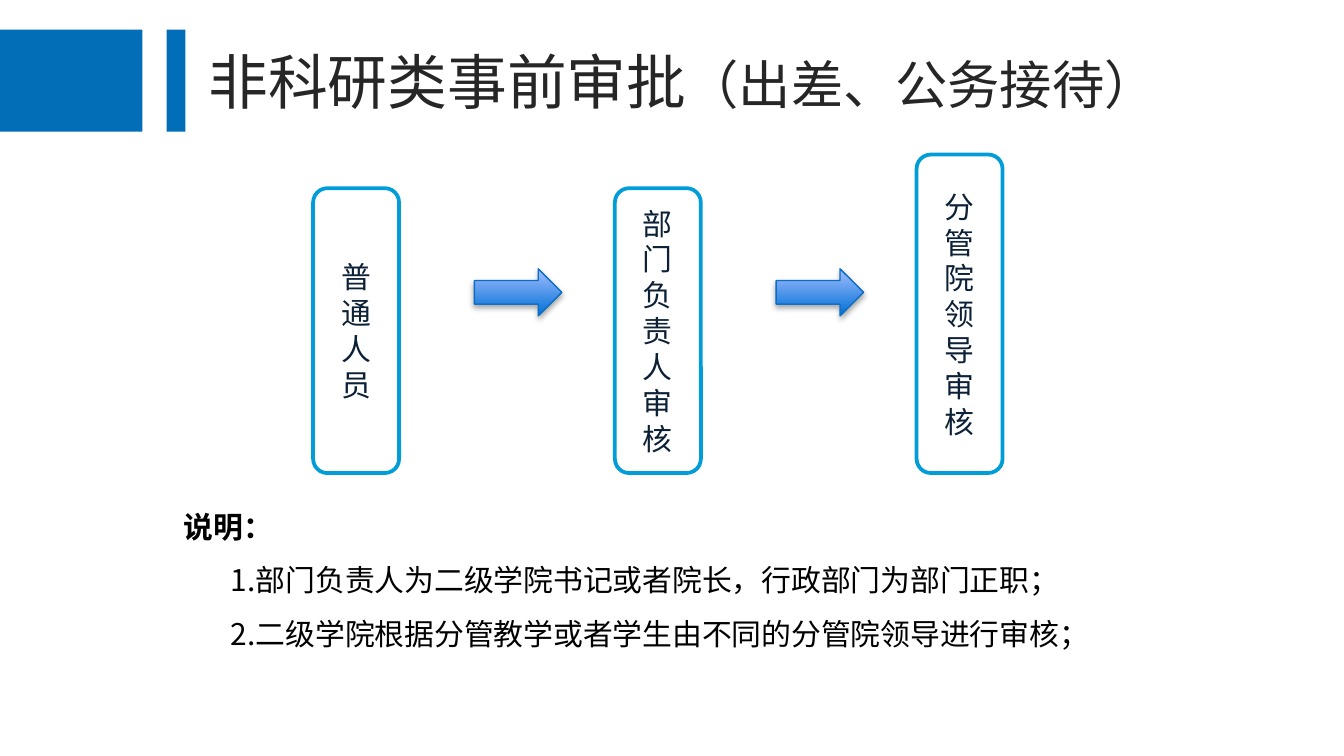
from typing import NamedTuple

from lxml import etree
from pptx import Presentation
from pptx import util as u
from pptx.dml.color import RGBColor
from pptx.enum import shapes, text
from pptx.oxml.ns import qn

WIDTH = u.Inches(10)
HEIGHT = WIDTH * 9 // 16
BLUE = RGBColor(0x03, 0x6E, 0xB8)
CYAN = RGBColor(0x00, 0x9D, 0xD9)
WHITE = RGBColor(0xFF, 0xFF, 0xFF)
BLACK = RGBColor(0x00, 0x00, 0x00)
CHARCOAL = RGBColor(0x26, 0x26, 0x26)
NAVY = RGBColor(0x0C, 0x20, 0x36)
ARROW_LOW = RGBColor(0x00, 0x70, 0xD5)
ARROW_HIGH = RGBColor(0xA3, 0xBD, 0xFF)
ARROW_EDGE = RGBColor(0x0A, 0x6D, 0xC6)
BODY_FONT, STEP_FONT = "Noto Sans CJK SC", "League Spartan"

# Flow grid, in inches: steps stand on one baseline at an equal pitch.
FLOW_LEFT, LAST_LEFT, FLOW_BOTTOM = 2.33, 6.82, 3.52
STEP_WIDTH = 0.64
ARROW_OFFSET, ARROW_TOP, ARROW_WIDTH, ARROW_HEIGHT = 1.2, 2, 0.65, 0.35


class Step(NamedTuple):
    label: str
    height: float


class Note(NamedTuple):
    words: str
    bold: bool = False
    indent: float = 0.35


STEPS = [Step("普通人员", 2.12), Step("部门负责人审核", 2.12), Step("分管院领导审核", 2.37)]
PITCH = (LAST_LEFT - FLOW_LEFT) / (len(STEPS) - 1)
NOTES = [
    Note("说明：", bold=True, indent=0),
    Note("1.部门负责人为二级学院书记或者院长，行政部门为部门正职；"),
    Note("2.二级学院根据分管教学或者学生由不同的分管院领导进行审核；"),
]


def place(item, left: float, top: float, width: float, height: float) -> None:
    item.left, item.top = u.Inches(left), u.Inches(top)
    item.width, item.height = u.Inches(width), u.Inches(height)


def set_font(paragraph, name: str, size: float, color: RGBColor, bold: bool = False) -> None:
    """Apply one font to Latin and East Asian text alike."""
    font = paragraph.font
    font.name, font.size, font.bold = name, u.Pt(size), bold
    font.color.rgb = color
    latin = font._rPr.find(qn("a:latin"))
    east_asian = etree.Element(qn("a:ea"), typeface=name)
    latin.addnext(east_asian)


def add_flat_shape(slide, kind, left: float, top: float, width: float, height: float):
    shape = slide.shapes.add_shape(kind, *map(u.Inches, (left, top, width, height)))
    shape.shadow.inherit = False
    return shape


def add_title(slide) -> None:
    for left, width in ((0, 1.06), (1.24, 0.14)):
        bar = add_flat_shape(slide, shapes.MSO_SHAPE.RECTANGLE, left, 0.22, width, 0.76)
        bar.fill.solid()
        bar.fill.fore_color.rgb = BLUE
        bar.line.fill.background()
    title = slide.shapes.title
    place(title, 1.45, 0.28, 8.32, 0.64)
    frame = title.text_frame
    frame.auto_size = text.MSO_AUTO_SIZE.NONE
    frame.vertical_anchor = text.MSO_ANCHOR.MIDDLE
    heading = frame.paragraphs[0]
    heading.alignment = text.PP_ALIGN.LEFT
    set_font(heading, BODY_FONT, 32, CHARCOAL)
    heading.add_run().text = "非科研类事前审批"
    scope = heading.add_run()
    scope.text = "（出差、公务接待）"
    scope.font.size = u.Pt(28)


def add_step(slide, column: int, step: Step) -> None:
    box = add_flat_shape(slide, shapes.MSO_SHAPE.ROUNDED_RECTANGLE, FLOW_LEFT + column * PITCH,
                         FLOW_BOTTOM - step.height, STEP_WIDTH, step.height)
    box.fill.solid()
    box.fill.fore_color.rgb = WHITE
    box.line.color.rgb = CYAN
    box.line.width = u.Pt(2)
    frame = box.text_frame
    frame.word_wrap = True
    frame.vertical_anchor = text.MSO_ANCHOR.MIDDLE
    label = frame.paragraphs[0]
    label.text = step.label
    label.alignment = text.PP_ALIGN.CENTER
    set_font(label, STEP_FONT, 16, NAVY)


def add_arrow(slide, column: int) -> None:
    arrow = add_flat_shape(slide, shapes.MSO_SHAPE.RIGHT_ARROW,
                           FLOW_LEFT + column * PITCH + ARROW_OFFSET,
                           ARROW_TOP, ARROW_WIDTH, ARROW_HEIGHT)
    arrow.fill.gradient()
    arrow.fill.gradient_angle = 90
    for stop, position, color in zip(arrow.fill.gradient_stops, (0, 1), (ARROW_LOW, ARROW_HIGH)):
        stop.position = position
        stop.color.rgb = color
    arrow.line.color.rgb = ARROW_EDGE
    arrow.line.width = u.Pt(0.75)
    effects = arrow._element.spPr.find(qn("a:effectLst"))
    shadow = etree.SubElement(effects, qn("a:outerShdw"), blurRad=str(u.Pt(3.1)),
                              dist=str(u.Pt(1.8)), dir=str(90 * 60000), rotWithShape="0")
    shade = etree.SubElement(shadow, qn("a:srgbClr"), val=str(BLACK))
    etree.SubElement(shade, qn("a:alpha"), val="35000")


def add_notes(slide) -> None:
    frame = slide.shapes.add_textbox(*map(u.Inches, (1.27, 3.6, 9.65, 1.31))).text_frame
    frame.word_wrap = True
    for row, note in enumerate(NOTES):
        line = frame.add_paragraph() if row else frame.paragraphs[0]
        line.text = note.words
        line.line_spacing = 1.5
        line._p.get_or_add_pPr().set("marL", str(u.Inches(note.indent)))
        set_font(line, BODY_FONT, 16, BLACK, note.bold)


def main() -> None:
    deck = Presentation()
    deck.slide_width, deck.slide_height = WIDTH, HEIGHT
    slide = deck.slides.add_slide(deck.slide_layouts[5])
    add_title(slide)
    for column, step in enumerate(STEPS):
        add_step(slide, column, step)
    for column in range(len(STEPS) - 1):
        add_arrow(slide, column)
    add_notes(slide)
    deck.save("out.pptx")


if __name__ == "__main__":
    main()
